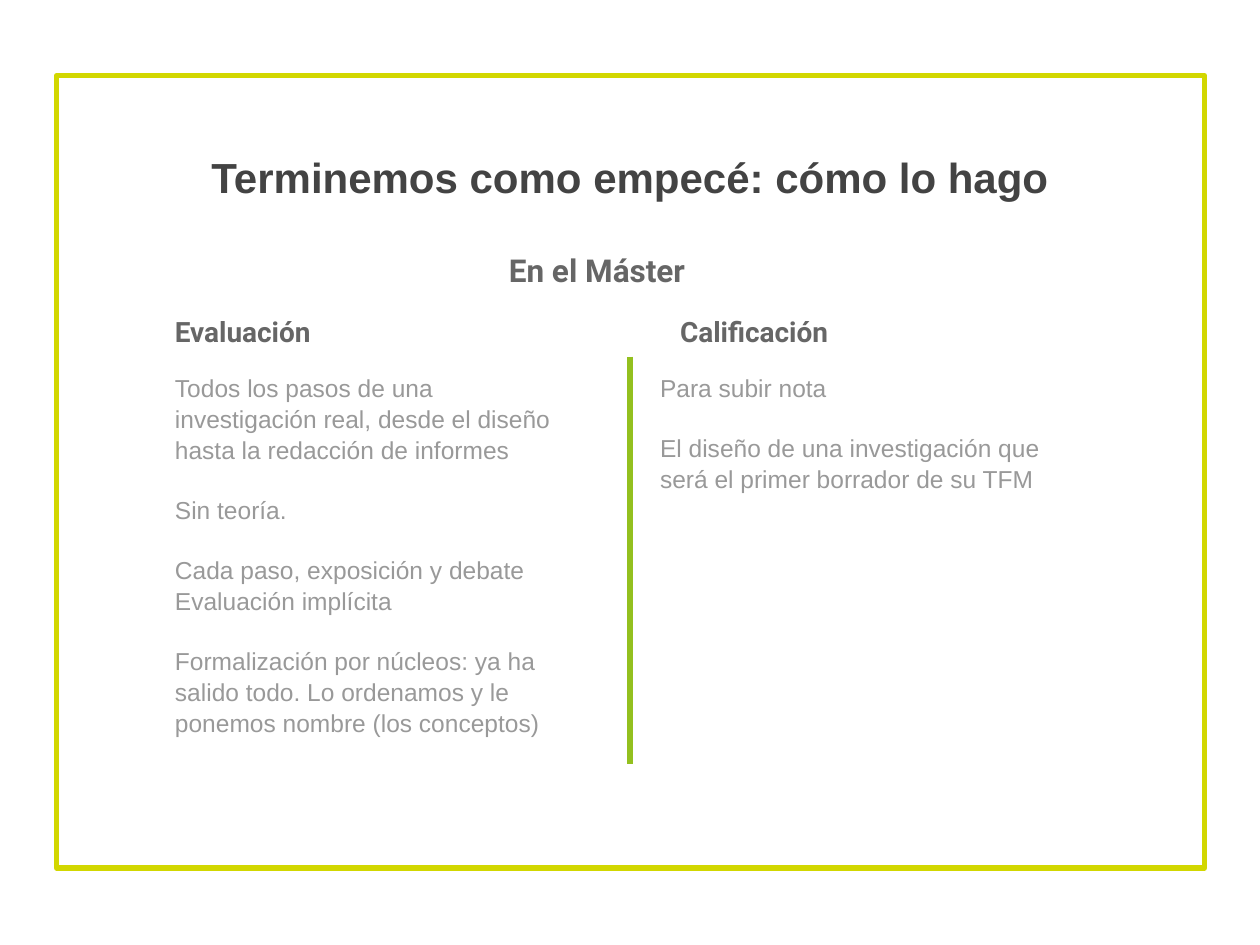
"""Build the slide on evaluation and grading in the master's programme."""
from lxml import etree
from pptx import Presentation
from pptx.dml.color import RGBColor
from pptx.enum.shapes import MSO_CONNECTOR, MSO_SHAPE
from pptx.enum.text import MSO_ANCHOR, PP_ALIGN
from pptx.oxml.ns import qn
from pptx.util import Inches, Pt

RECTANGLE = MSO_SHAPE.RECTANGLE
STRAIGHT = MSO_CONNECTOR.STRAIGHT
TOP, BOTTOM = MSO_ANCHOR.TOP, MSO_ANCHOR.BOTTOM
LEFT, CENTER = PP_ALIGN.LEFT, PP_ALIGN.CENTER

LIME = RGBColor(0xD2, 0xD7, 0x00)
GREEN = RGBColor(0x93, 0xC0, 0x1F)
DARK_GRAY = RGBColor(0x43, 0x43, 0x43)
MID_GRAY = RGBColor(0x66, 0x66, 0x66)
LIGHT_GRAY = RGBColor(0x99, 0x99, 0x99)

TITLE = "Terminemos como empecé: cómo lo hago"
SUBTITLE = "En el Máster"
COLUMNS = [
    {
        "heading": "Evaluación",
        "heading_left": 1.29,
        "body_left": 1.29,
        "body": [
            "Todos los pasos de una investigación real, desde el diseño hasta la redacción de informes",
            "Sin teoría.",
            "Cada paso, exposición y debate Evaluación implícita",
            "Formalización por núcleos: ya ha salido todo. Lo ordenamos y le ponemos nombre (los conceptos)",
        ],
    },
    {
        "heading": "Calificación",
        "heading_left": 5.3,
        "body_left": 5.14,
        "body": [
            "Para subir nota",
            "El diseño de una investigación que será el primer borrador de su TFM",
        ],
    },
]

FRAME = (0.45, 0.6, 9.11, 6.29)
DIVIDER = (5, 2.83, 5, 6.06)
TITLE_BOX = (0, 1.06, 10, 0.7)
SUBTITLE_BOX = (3.94, 1.94, 3.47, 0.45)
HEADING_TOP, HEADING_SIZE = 2.41, (3.47, 0.45)
BODY_TOP, BODY_SIZE = 2.85, (3.39, 3.1)

TITLE_STYLE = {
    "font": {"name": "Arial", "size": Pt(24), "bold": True},
    "color": DARK_GRAY,
    "paragraph": {"alignment": CENTER, "line_spacing": 1.1},
    "anchor": TOP,
}
SUBTITLE_STYLE = {
    "font": {"name": "Roboto", "size": Pt(18), "bold": True},
    "color": MID_GRAY,
    "paragraph": {"alignment": LEFT},
    "anchor": BOTTOM,
}
HEADING_STYLE = {
    **SUBTITLE_STYLE,
    "font": {"name": "Roboto", "size": Pt(16), "bold": True},
}
BODY_STYLE = {
    "font": {"name": "Arial", "size": Pt(14), "bold": False},
    "color": LIGHT_GRAY,
    "paragraph": {"alignment": LEFT, "line_spacing": 1.05},
    "anchor": TOP,
}
BODY_GAP = Pt(16.8)


def set_attributes(target, values):
    for name, value in values.items():
        setattr(target, name, value)


def add_text(slide, box, texts, style):
    text_frame = slide.shapes.add_textbox(*map(Inches, box)).text_frame
    margins = ("margin_left", "margin_top", "margin_right", "margin_bottom")
    set_attributes(text_frame, dict.fromkeys(margins, Inches(0.1)))
    set_attributes(text_frame, {"word_wrap": True, "vertical_anchor": style["anchor"]})
    for index, text in enumerate(texts):
        paragraph = text_frame.add_paragraph() if index else text_frame.paragraphs[0]
        set_attributes(paragraph, style["paragraph"])
        if index:
            paragraph.space_before = BODY_GAP
        run = paragraph.add_run()
        run.text = text
        set_attributes(run.font, style["font"])
        run.font.color.rgb = style["color"]


def style_line(shape, color):
    shape.line.color.rgb = color
    shape.line.width = Pt(3)


def add_frame(slide):
    frame = slide.shapes.add_shape(RECTANGLE, *map(Inches, FRAME))
    frame.shadow.inherit = False
    frame.fill.background()
    style_line(frame, LIME)


def add_divider(slide):
    divider = slide.shapes.add_connector(STRAIGHT, *map(Inches, DIVIDER))
    style_line(divider, GREEN)
    etree.SubElement(divider._element.spPr, qn("a:effectLst"))


def main():
    presentation = Presentation()
    presentation.slide_width = Inches(10)
    presentation.slide_height = Inches(7.5)
    slide = presentation.slides.add_slide(presentation.slide_layouts[6])
    add_frame(slide)
    add_text(slide, TITLE_BOX, [TITLE], TITLE_STYLE)
    add_divider(slide)
    add_text(slide, SUBTITLE_BOX, [SUBTITLE], SUBTITLE_STYLE)
    for column in COLUMNS:
        heading_box = (column["heading_left"], HEADING_TOP, *HEADING_SIZE)
        body_box = (column["body_left"], BODY_TOP, *BODY_SIZE)
        add_text(slide, heading_box, [column["heading"]], HEADING_STYLE)
        add_text(slide, body_box, column["body"], BODY_STYLE)
    presentation.save("out.pptx")


if __name__ == "__main__":
    main()
